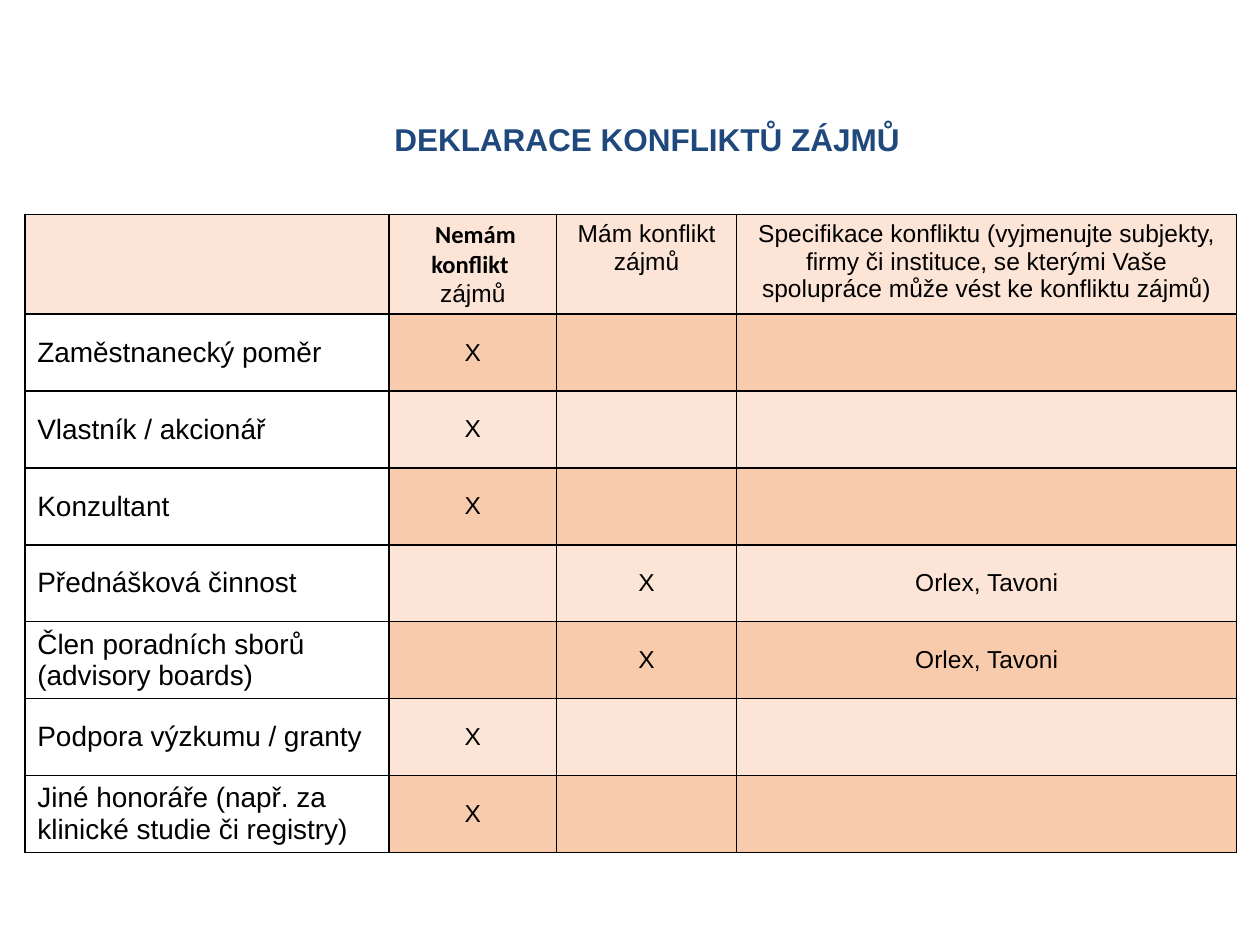
from lxml.etree import SubElement
from pptx import Presentation
from pptx.dml.color import RGBColor
from pptx.enum.text import MSO_ANCHOR, MSO_AUTO_SIZE, PP_ALIGN
from pptx.oxml.ns import qn
from pptx.util import Cm, Pt

BLACK = RGBColor(0x00, 0x00, 0x00)
WHITE = RGBColor(0xFF, 0xFF, 0xFF)
NAVY = RGBColor(0x1F, 0x49, 0x7D)
PALE = RGBColor(0xFC, 0xE4, 0xD6)
PEACH = RGBColor(0xF8, 0xCB, 0xAD)

WIDTHS = (7.34, 3.38, 3.63, 10.08)
ROW_H = 1.55
FIRMS = "Orlex, Tavoni"
HEADS = (
    "Mám konflikt zájmů",
    "Specifikace konfliktu (vyjmenujte subjekty, firmy či instituce, "
    "se kterými Vaše spolupráce může vést ke konfliktu zájmů)",
)
ROWS = (
    ("Zaměstnanecký poměr", "X", "", ""),
    ("Vlastník / akcionář", "X", "", ""),
    ("Konzultant", "X", "", ""),
    ("Přednášková činnost", "", "X", FIRMS),
    ("Člen poradních sborů (advisory boards)", "", "X", FIRMS),
    ("Podpora výzkumu / granty", "X", "", ""),
    ("Jiné honoráře (např. za klinické studie či registry)", "X", "", ""),
)


def add_run(para, text, size=14, font="Arial", color=BLACK, bold=False):
    run = para.add_run()
    run.text = text
    run.font.size = Pt(size)
    run.font.name = font
    run.font.color.rgb = color
    run.font.bold = bold


def add_title(slide):
    box = slide.shapes.add_textbox(Cm(7.7), Cm(2.29), Cm(10.82), Cm(1.02))
    frame = box.text_frame
    frame.word_wrap = False
    frame.auto_size = MSO_AUTO_SIZE.SHAPE_TO_FIT_TEXT
    add_run(frame.paragraphs[0], "DEKLARACE KONFLIKTŮ ZÁJMŮ", 18, color=NAVY, bold=True)


def style_cell(cell, fill):
    """Give the cell thin black borders and a solid fill."""
    props = cell._tc.get_or_add_tcPr()
    for side in ("a:lnL", "a:lnR", "a:lnT", "a:lnB"):
        line = SubElement(props, qn(side), w=str(Pt(1)))
        paint = SubElement(line, qn("a:solidFill"))
        SubElement(paint, qn("a:srgbClr"), val=str(BLACK))
    cell.fill.solid()
    cell.fill.fore_color.rgb = fill


def fill_head(table):
    for cell in table.rows[0].cells:
        style_cell(cell, PALE)
    frame = table.cell(0, 1).text_frame
    first, last = frame.paragraphs[0], frame.add_paragraph()
    first.alignment = last.alignment = PP_ALIGN.CENTER
    add_run(first, " ", font="Calibri")
    add_run(first, "Nemám konflikt ", font="Calibri", bold=True)
    add_run(last, "zájmů")
    for col, text in enumerate(HEADS, 2):
        para = table.cell(0, col).text_frame.paragraphs[0]
        para.alignment = PP_ALIGN.CENTER
        add_run(para, text)


def fill_body(table):
    for row, texts in enumerate(ROWS, 1):
        band = PEACH if row % 2 else PALE
        for col, text in enumerate(texts):
            cell = table.cell(row, col)
            style_cell(cell, band if col else WHITE)
            cell.vertical_anchor = MSO_ANCHOR.MIDDLE
            if text:
                para = cell.text_frame.paragraphs[0]
                para.alignment = PP_ALIGN.CENTER if col else PP_ALIGN.LEFT
                add_run(para, text, 14 if col else 16)


def add_grid(slide):
    count = len(ROWS) + 1
    table = slide.shapes.add_table(
        count, len(WIDTHS), Cm(0.5), Cm(4.32), Cm(sum(WIDTHS)), Cm(ROW_H * count)
    ).table
    table.first_row = table.horz_banding = False
    for col, width in zip(table.columns, WIDTHS):
        col.width = Cm(width)
    for row in table.rows:
        row.height = Cm(ROW_H)
    fill_head(table)
    fill_body(table)


def main():
    deck = Presentation()
    deck.slide_width, deck.slide_height = Cm(25.4), Cm(19.05)
    slide = deck.slides.add_slide(deck.slide_layouts[6])
    add_grid(slide)
    add_title(slide)
    deck.save("out.pptx")


if __name__ == "__main__":
    main()
